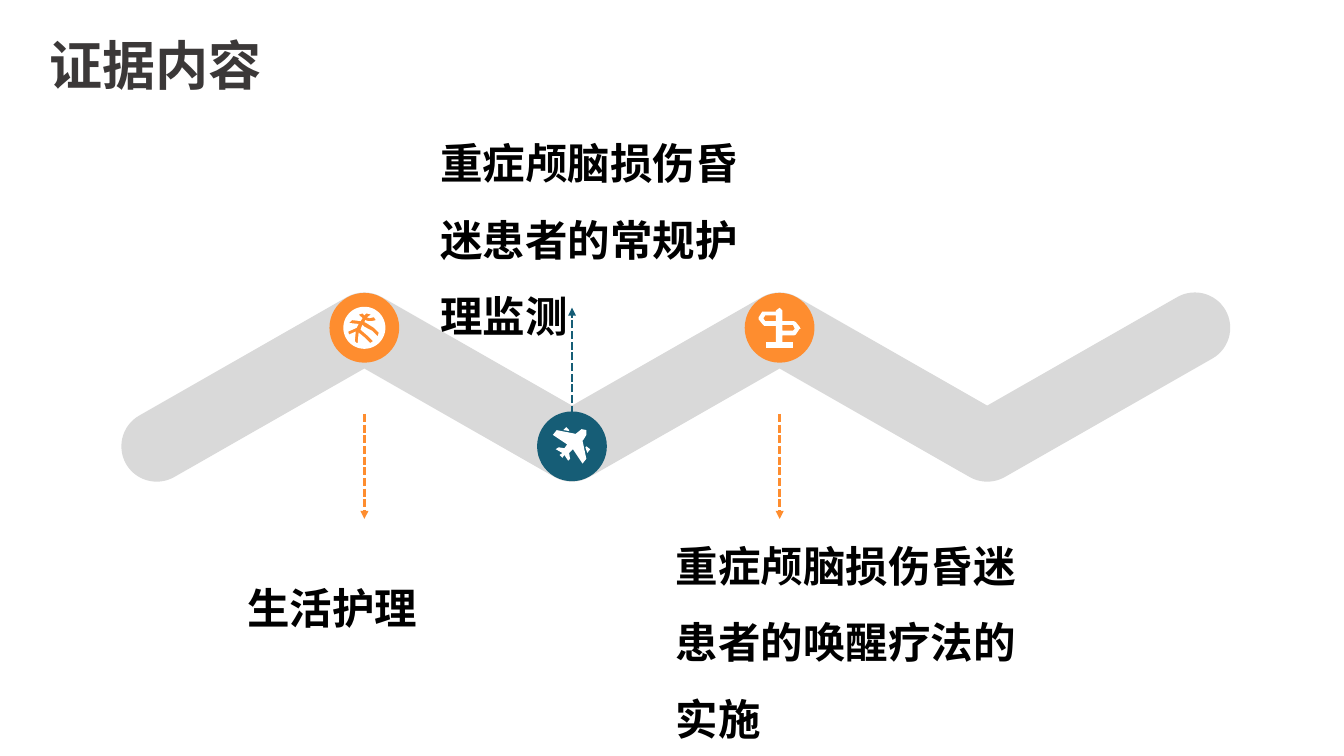
import math

import pptx
import pptx.util
from lxml import etree
from pptx.dml.color import RGBColor
from pptx.enum.dml import MSO_LINE
from pptx.enum.shapes import MSO_CONNECTOR, MSO_SHAPE
from pptx.oxml.ns import qn
from pptx.util import Inches

COLORS = {"band": "D9D9D9", "orange": "FE8D2F", "teal": "165D76",
          "white": "FFFFFF", "text": "000000", "title": "3B3838"}
FONT = "Noto Sans CJK SC"
BAND_R, DISC_D = 0.37, 0.73


def rgb(name):
    return RGBColor.from_string(COLORS[name])


def arc(cx, cy, r, start, end, step=6):
    return [(cx + r * math.cos(math.radians(a)), cy + r * math.sin(math.radians(a)))
            for a in range(start, end + 1, step)]


# Icon outlines, in hundredths of an inch from the disc centre
PALM = [
    arc(0, 0, 22, 0, 354),
    [(-13, -8), (-15, -6), (-16, -5), (-6, -4), (-8, 0), (-17, 4), (-16, 7), (-9, 4),
     (-10, 14), (-8, 16), (-7, 16), (-6, 5), (0, 10), (6, 16), (9, 14), (3, 8), (-4, 2),
     (-3, -1), (-2, -3), (0, -1), (8, 3), (14, 9), (15, 5), (10, 0), (2, -5), (0, -6),
     (1, -8), (4, -7), (8, -7), (12, -8), (10, -11), (5, -10), (3, -11), (7, -14),
     (2, -15), (0, -13), (-2, -15), (-5, -14), (-6, -14), (-2, -10), (-4, -7)],
]
PLANE = [
    [(15, -17), (15, -12), (12, -7), (11, -6), (15, 13), (11, 18), (1, 3), (-3, 7),
     (-2, 13), (-4, 15), (-8, 9), (-10, 12), (-13, 9), (-10, 7), (-17, 3), (-14, 1),
     (-8, 2), (-5, -2), (-20, -12), (-16, -17), (4, -13), (5, -14), (10, -18)],
    [(19, 3), (15, 0), (14, 1), (16, 7)],
    [(-6, -20), (-9, -17), (-3, -16), (-3, -17)],
]
SIGNPOST = [
    [(3, -7), (15, -7), (17, -6), (21, -1), (22, 1), (21, 1), (17, 7), (15, 8), (3, 8),
     (3, 15), (14, 15), (14, 21), (-14, 21), (-14, 15), (-4, 15), (-4, -2), (-16, -2),
     (-18, -4), (-22, -9), (-22, -11), (-18, -17), (-16, -17), (-4, -17), (-4, -18),
     (0, -21), (3, -18)],
    [(-4, -13), (-15, -13), (-17, -10), (-15, -7), (-4, -7)],
    [(14, -3), (3, -3), (3, 3), (14, 3), (16, 1)],
]


def paint(sp, color):
    sp.shadow.inherit = False
    sp.fill.solid()
    sp.fill.fore_color.rgb = rgb(color)
    sp.line.fill.background()


def add_outline(s, contours, color):
    contours = [[(Inches(x), Inches(y)) for x, y in c] for c in contours]
    fb = s.shapes.build_freeform(*contours[0][0], scale=1.0)
    for i, points in enumerate(contours):
        if i:
            fb.move_to(*points[0])
        fb.add_line_segments(points[1:], close=True)
    paint(fb.convert_to_shape(), color)


def add_text(s, box, text, size, color, wrap=True, spacing=None):
    tf = s.shapes.add_textbox(*map(Inches, box)).text_frame
    tf.word_wrap = wrap
    p = tf.paragraphs[0]
    if spacing:
        p.line_spacing = spacing
    r = p.add_run()
    r.text = text
    for key, value in {"size": pptx.util.Pt(size), "bold": True, "name": FONT}.items():
        setattr(r.font, key, value)
    r.font.color.rgb = rgb(color)
    etree.SubElement(r.font._element, qn("a:ea")).set("typeface", FONT)


def add_arrow(s, x, y1, y2, color):
    c = s.shapes.add_connector(MSO_CONNECTOR.STRAIGHT, *map(Inches, (x, y1, x, y2)))
    c.line.color.rgb = rgb(color)
    for key, value in {"width": pptx.util.Pt(2), "dash_style": MSO_LINE.SQUARE_DOT}.items():
        setattr(c.line, key, value)
    etree.SubElement(c.line._get_or_add_ln(), qn("a:tailEnd")).set("type", "triangle")
    etree.SubElement(c._element.spPr, qn("a:effectLst"))


def add_zigzag(s, box):
    """Draw the band across the box and return its turning points."""
    x, y, w, h = box
    step = (w - 2 * BAND_R) / 5
    low, high = y + h - BAND_R, y + BAND_R
    nodes = [(x + BAND_R + i * step, high if i % 2 else low) for i in range(6)]
    inner = BAND_R / math.cos(math.atan2(low - high, step))
    # Upper edge left to right, then lower edge back
    edge = arc(*nodes[0], BAND_R, 60, 240)
    for i in range(1, 5):
        nx, ny = nodes[i]
        edge += arc(nx, ny, BAND_R, 240, 300) if i % 2 else [(nx, ny - inner)]
    edge += arc(*nodes[5], BAND_R, 240, 420)
    for i in range(4, 0, -1):
        nx, ny = nodes[i]
        edge += [(nx, ny + inner)] if i % 2 else arc(nx, ny, BAND_R, 60, 120)
    add_outline(s, [edge], "band")
    return nodes


def add_stop(s, node, icon, color):
    x, y = node
    box = (x - DISC_D / 2, y - DISC_D / 2, DISC_D, DISC_D)
    paint(s.shapes.add_shape(MSO_SHAPE.OVAL, *map(Inches, box)), color)
    add_outline(s, [[(x + dx / 100, y + dy / 100) for dx, dy in c] for c in icon], "white")


def add_route(s, box):
    nodes = add_zigzag(s, box)
    mid = box[1] + 1.27
    # Icon, colour, arrow length, label box, label
    stops = [
        (PALM, "orange", 1.1, (2.49, 5.77, 2.9, 0.9), "生活护理"),
        (PLANE, "teal", -1.11, (4.51, 1.12, 3.43, 2.52), "重症颅脑损伤昏迷患者的常规护理监测"),
        (SIGNPOST, "orange", 1.1, (6.97, 5.33, 4.07, 2.52), "重症颅脑损伤昏迷患者的唤醒疗法的实施"),
    ]
    for node, (icon, color, length, label_box, label) in zip(nodes[1:], stops):
        add_stop(s, node, icon, color)
        add_arrow(s, node[0], mid, mid + length, color)
        add_text(s, label_box, label, 32, "text", spacing=1.5)


def main():
    prs = pptx.Presentation()
    prs.slide_width, prs.slide_height = Inches(14.06), Inches(7.91)
    s = prs.slides.add_slide(prs.slide_layouts[6])
    add_route(s, (1.27, 3.06, 11.6, 1.98))
    add_text(s, (0.42, 0.29, 2.46, 0.78), "证据内容", 40, "title", wrap=False)
    prs.save("out.pptx")


if __name__ == "__main__":
    main()
